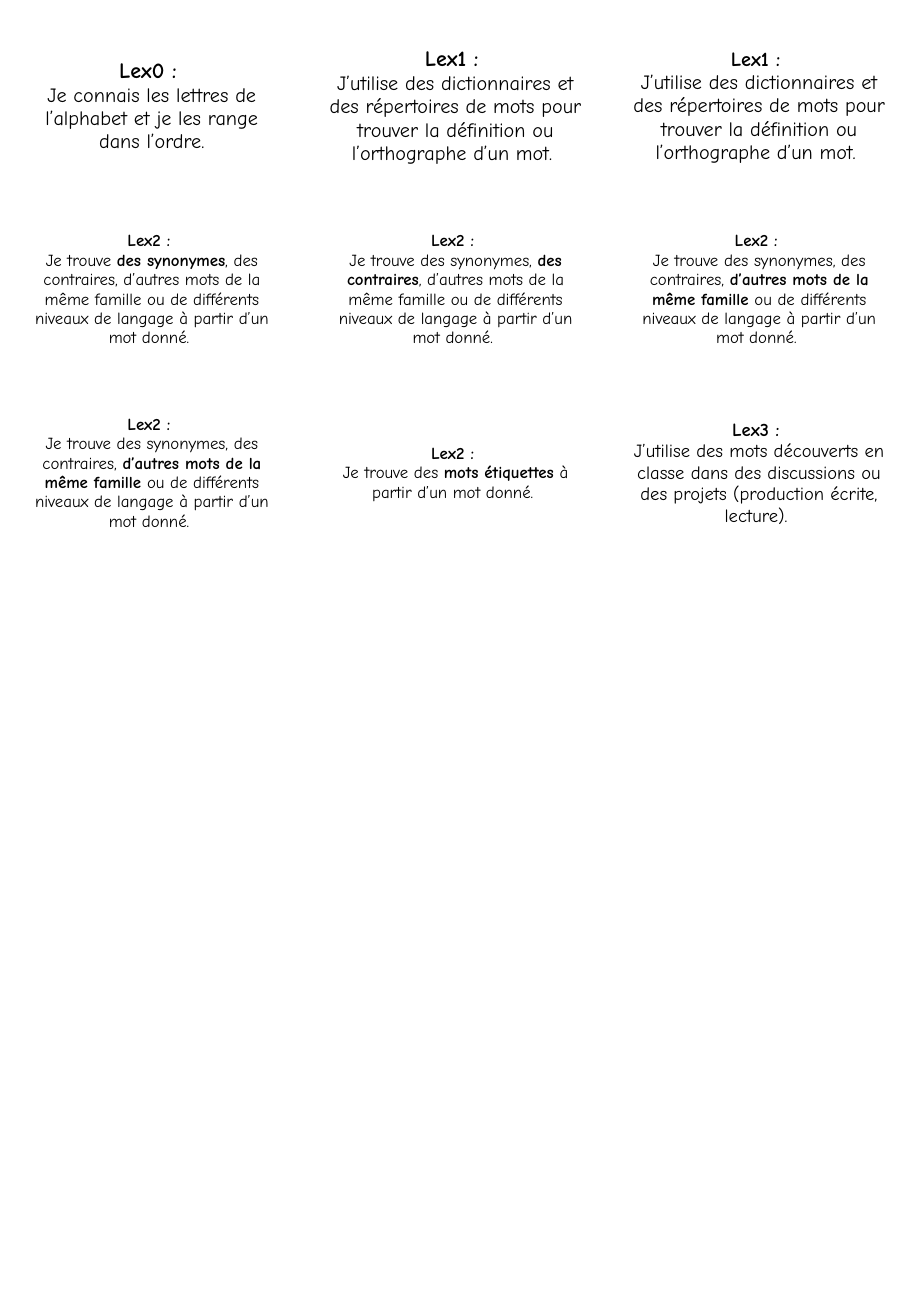
import pptx
import pptx.dml.color
import pptx.enum.text
import pptx.util

Inches = pptx.util.Inches

COLOURS = {"paper": "FFFFFF", "ink": "000000"}
COLUMNS, ROWS = 3, 7
CELL_WIDTH, CELL_HEIGHT = 2.5, 1.51

# Skill wording; asterisks enclose the bold words
ALPHABET = "Je connais les lettres de l’alphabet et je les range dans l’ordre."
DICTIONARY = ("J’utilise des dictionnaires et des répertoires de mots pour trouver "
              "la définition ou l’orthographe d’un mot. ")
RELATED = ("Je trouve des synonymes, des contraires, d’autres mots de la même famille "
           "ou de différents niveaux de langage à partir d’un mot donné. ")
FAMILY = "d’autres mots de la même famille "
LABELS = "Je trouve des *mots étiquettes* à partir d’un mot donné. "
PROJECTS = ("J’utilise des mots découverts en classe dans des discussions ou des "
            "projets (production écrite, lecture). ")


def emphasise(text, words):
    return text.replace(words, f"*{words}*")


# Heading, heading size, wording, wording size
SKILLS = [
    ("Lex0 : ", 13, ALPHABET, 12),
    ("Lex1 : ", 13, DICTIONARY, 12),
    ("Lex1 : ", 12, DICTIONARY, 12),
    ("Lex2 : ", 10, emphasise(RELATED, "des synonymes"), 10),
    ("Lex2 : ", 10, emphasise(RELATED, "des contraires"), 10),
    ("Lex2 : ", 10, emphasise(RELATED, FAMILY), 10),
    ("Lex2 : ", 10, emphasise(RELATED, FAMILY), 10),
    ("Lex2 : ", 10, LABELS, 10),
    ("Lex3 : ", 11, PROJECTS, 11),
]


class LabelPage:
    """Holds the style and the current slide."""

    font = "Comic Neue"

    def __init__(self, deck):
        self.slide = deck.slides.add_slide(deck.slide_layouts[6])

    def colour(self, name):
        return pptx.dml.color.RGBColor.from_string(COLOURS[name])

    def add_grid(self, left, top):
        frame = self.slide.shapes.add_table(
            ROWS, COLUMNS, Inches(left), Inches(top),
            Inches(COLUMNS * CELL_WIDTH), Inches(ROWS * CELL_HEIGHT))
        table = frame.table
        table.first_row = table.horz_banding = False
        for column in table.columns:
            column.width = Inches(CELL_WIDTH)
        for row in table.rows:
            row.height = Inches(CELL_HEIGHT)
        for cell in table.iter_cells():
            cell.fill.solid()
            cell.fill.fore_color.rgb = self.colour("paper")
            cell.vertical_anchor = pptx.enum.text.MSO_ANCHOR.MIDDLE
            cell.margin_left = cell.margin_right = Inches(0.21)
            cell.margin_top = cell.margin_bottom = Inches(0.14)
        return table

    def write_paragraph(self, para, text, size):
        para.alignment = pptx.enum.text.PP_ALIGN.CENTER
        for index, part in enumerate(text.split("*")):
            if part:
                span = para.add_run()
                span.text = part
                span.font.name = self.font
                span.font.size = pptx.util.Pt(size)
                span.font.bold = index % 2 == 1
                span.font.color.rgb = self.colour("ink")

    def write_skill(self, cell, heading, heading_size, wording, wording_size):
        frame = cell.text_frame
        self.write_paragraph(frame.paragraphs[0], f"*{heading}*", heading_size)
        self.write_paragraph(frame.add_paragraph(), wording, wording_size)


def main():
    deck = pptx.Presentation()
    deck.slide_width = Inches(7.5)
    deck.slide_height = Inches(10.83)

    # Sheet of labels, filled row by row
    page = LabelPage(deck)
    table = page.add_grid(0, 0.12)
    for cell, skill in zip(table.iter_cells(), SKILLS):
        page.write_skill(cell, *skill)

    deck.save("out.pptx")


if __name__ == "__main__":
    main()
